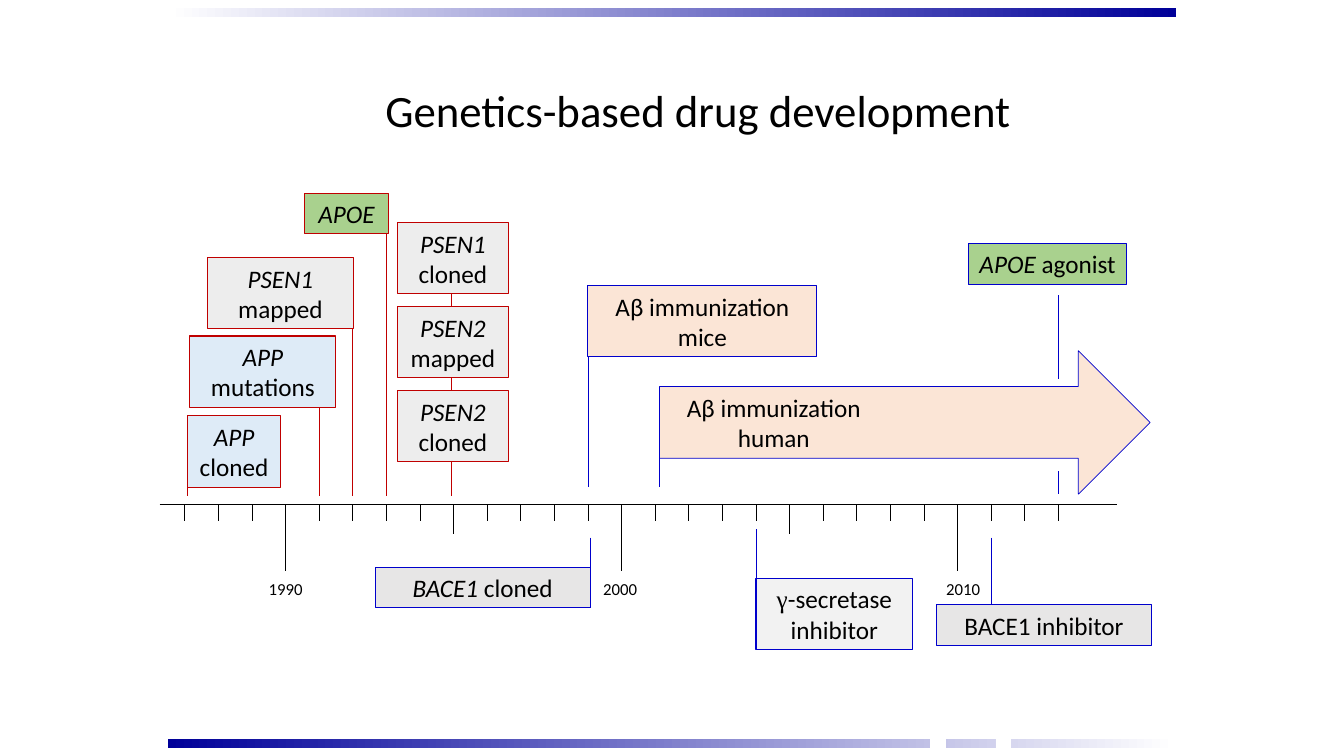
from pptx import Presentation
from pptx.util import Pt
from pptx.dml.color import RGBColor
from pptx.enum.shapes import MSO_SHAPE as SHAPE, MSO_CONNECTOR as CONN
from pptx.enum.text import PP_ALIGN as ALIGN, MSO_ANCHOR as ANCHOR
from lxml import etree

BLACK, WHITE, RED, BLUE, NAVY = "000000", "FFFFFF", "C00000", "0000CC", "000099"
GREEN, GREY, SKY, PEACH, SILVER, PALE = "A9D18E", "EDEDED", "DEEBF7", "FBE5D6", "E7E6E6", "F2F2F2"
A_NS = "http://schemas.openxmlformats.org/drawingml/2006/main"
AXIS_Y, FIRST, LAST = 360, 1987, 2013


def rgb(hex_color):
    return RGBColor.from_string(hex_color)


def year_x(year):
    return 204 + 24 * (year - 1990)


def add_line(s, x1, y1, x2, y2, color):
    c = s.shapes.add_connector(CONN.STRAIGHT, Pt(x1), Pt(y1), Pt(x2), Pt(y2))
    c.line.color.rgb = rgb(color)
    c.line.width = Pt(0.5)
    etree.SubElement(c._element.spPr, f"{{{A_NS}}}effectLst")


def add_block(s, box, fill, line=None, width=0.75, kind=SHAPE.RECTANGLE):
    sp = s.shapes.add_shape(kind, *map(Pt, box))
    sp.shadow.inherit = False
    if fill:
        sp.fill.solid()
        sp.fill.fore_color.rgb = rgb(fill)
    if line:
        sp.line.color.rgb = rgb(line)
        sp.line.width = Pt(width)
    else:
        sp.line.fill.background()
    return sp


def write(sp, paragraphs, size=18, align=ALIGN.CENTER):
    """Each paragraph is a list of runs: (text, italic, optional font)."""
    tf = sp.text_frame
    tf.word_wrap = True
    tf.vertical_anchor = ANCHOR.MIDDLE
    for i, runs in enumerate(paragraphs):
        p = tf.paragraphs[0] if i == 0 else tf.add_paragraph()
        p.alignment = align
        for text, italic, *font in runs:
            r = p.add_run()
            r.text = text
            r.font.size = Pt(size)
            r.font.name = font[0] if font else "Calibri"
            r.font.italic = italic
            r.font.color.rgb = rgb(BLACK)


def gene(name, rest=""):
    return [[(name, True)] + ([(" " + rest, False)] if rest else [])]


def plain(*lines):
    return [[(line, False)] for line in lines]


def add_bar(s, box, left, right):
    sp = add_block(s, box, None)
    sp.fill.gradient()
    sp.fill.gradient_angle = 0
    for stop, color, pos in zip(sp.fill.gradient_stops, (left, right), (0, 1)):
        stop.color.rgb = rgb(color)
        stop.position = pos


def add_frame(s, x, y, w, h):
    # Gradient bars along the top and bottom, with breaks in the lower one
    add_bar(s, (x, y, w, 6), WHITE, NAVY)
    add_bar(s, (x, y + h - 6, w, 6), NAVY, WHITE)
    for gap_x, gap_w in ((665, 10.5), (712, 10)):
        add_block(s, (x - 120 + gap_x, y + h - 9, gap_w, 11), WHITE, WHITE, 1)


def add_title(s, box, text):
    sp = s.shapes.title
    sp.left, sp.top, sp.width, sp.height = map(Pt, box)
    write(sp, plain(text), 32, ALIGN.LEFT)


def add_axis(s, x, y, w):
    # Axis with a tick per year, longer every five and ten years
    add_line(s, x, y, x + w, y, BLACK)
    for year in range(FIRST, LAST + 1):
        tick = 48 if year % 10 == 0 else 21.5 if year % 5 == 0 else 12
        add_line(s, year_x(year), y, year_x(year), y + tick, BLACK)
    for year, left in ((1990, 180), (2000, 419), (2010, 664)):
        label = s.shapes.add_textbox(Pt(left), Pt(y + 50), Pt(48), Pt(21.5))
        write(label, plain(str(year)), 12)


def add_event(s, box, paragraphs, fill, line, *stems):
    # A labelled box; each stem is (x, top, bottom)
    for x, top, bottom in stems:
        add_line(s, x, top, x, bottom, line)
    write(add_block(s, box, fill, line), paragraphs)


def add_discoveries(s, x, y):
    # Genes mapped and cloned, above the axis
    foot = AXIS_Y - 6
    add_event(s, (x + 14, y + 46, 104.5, 51), gene("PSEN1", "mapped"), GREY, RED,
              (year_x(1992), y + 48, foot))
    add_event(s, (x + 83.5, y, 60, 29), gene("APOE"), GREEN, RED,
              (year_x(1993), y + 18, foot))
    add_event(s, (x + 1.5, y + 102, 104.5, 51), gene("APP", "mutations"), SKY, RED,
              (year_x(1991), y + 102, foot))
    add_event(s, (x, y + 159, 66.5, 51), gene("APP", "cloned"), SKY, RED,
              (x, y + 192, foot))
    add_line(s, year_x(1995) - 1.5, y + 42, year_x(1995) - 1.5, foot, RED)
    for i, (name, step) in enumerate((("PSEN1", "cloned"), ("PSEN2", "mapped"), ("PSEN2", "cloned"))):
        add_event(s, (x + 150, y + 21 + 60 * i, 79, 51), gene(name, step), GREY, RED)


def add_immunization(s, x, y):
    # Mouse study, then the arrow of human studies
    foot = AXIS_Y - 12
    arrow_x, arrow_y = x + 51, y + 46.5
    add_block(s, (arrow_x, arrow_y, 350.5, 102.5), PEACH, BLUE, 0.5, SHAPE.RIGHT_ARROW)
    add_event(s, (x, y, 163.5, 51), plain("Aβ immunization", "mice"), PEACH, BLUE,
              (x, y + 3, foot))
    label = s.shapes.add_textbox(Pt(arrow_x), Pt(y + 72), Pt(163.5), Pt(51))
    write(label, plain("Aβ immunization", "human"))
    add_line(s, arrow_x, y + 103, arrow_x, foot, BLUE)


def add_drugs(s, x, y):
    # Targets and drugs around the axis
    add_event(s, (x, y, 153.5, 29), gene("BACE1", "cloned"), SILVER, BLUE,
              (x + 153.5, y - 21, y + 29))
    secretase = [[("γ", False, "Times New Roman"), ("-secretase inhibitor", False)]]
    add_event(s, (x + 272, y + 8, 112, 51), secretase, PALE, BLUE,
              (year_x(2004), y - 27, y + 58))
    add_event(s, (x + 401, y + 27, 153.5, 29), plain("BACE1 inhibitor"), SILVER, BLUE,
              (year_x(2011), y - 21, y + 51))
    add_event(s, (x + 424, y - 231, 112.5, 29), gene("APOE", "agonist"), GREEN, BLUE,
              (year_x(2013), y - 194, y - 134.5), (year_x(2013), y - 68.5, y - 52))


def main():
    prs = Presentation()
    prs.slide_width, prs.slide_height = Pt(960), Pt(540)
    s = prs.slides.add_slide(prs.slide_layouts[5])
    add_title(s, (268, 55, 564, 46), "Genetics-based drug development")
    add_axis(s, 114, AXIS_Y, 684)
    add_discoveries(s, 134, 138)
    add_immunization(s, 420, 204)
    add_drugs(s, 268, 405)
    add_frame(s, 120, 6, 720, 528)
    prs.save("out.pptx")


if __name__ == "__main__":
    main()
